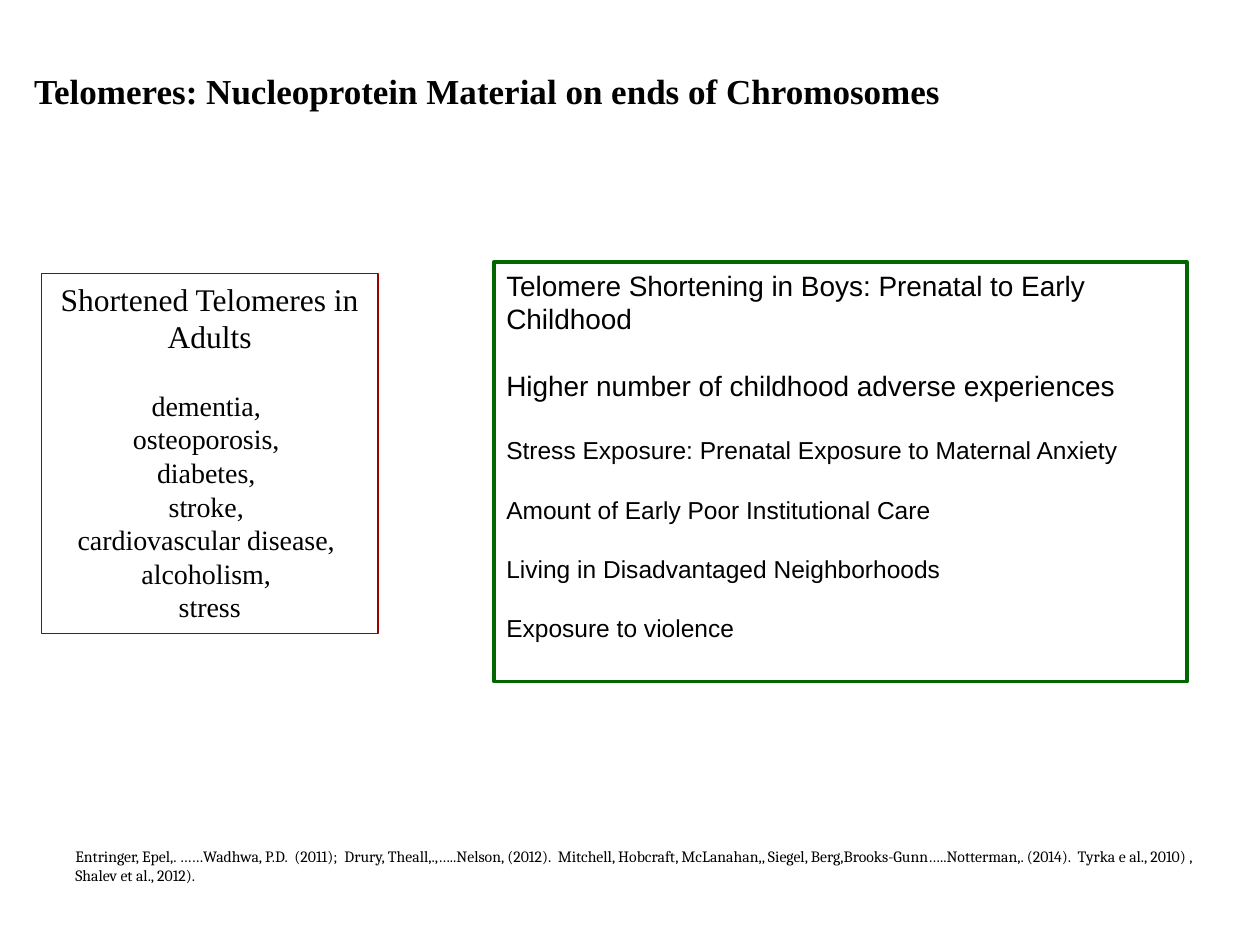
import pptx
import pptx.util
import pptx.dml.color
import pptx.enum.shapes
import pptx.enum.text

Inches = pptx.util.Inches
Pt = pptx.util.Pt
Align = pptx.enum.text.PP_ALIGN
Anchor = pptx.enum.text.MSO_ANCHOR

BLACK = pptx.dml.color.RGBColor(0x00, 0x00, 0x00)
WHITE = pptx.dml.color.RGBColor(0xFF, 0xFF, 0xFF)
GREEN = pptx.dml.color.RGBColor(0x00, 0x66, 0x00)
RED = pptx.dml.color.RGBColor(0x9E, 0x00, 0x00)

TITLE = "Telomeres: Nucleoprotein Material on ends of Chromosomes"
ADULT_HEADING = "Shortened Telomeres in Adults"
ADULT_CONDITIONS = ["dementia, ", "osteoporosis, ", "diabetes, ", "stroke, ",
                    "cardiovascular disease, ", "alcoholism, ", "stress"]
BOYS_FINDINGS = ["Telomere Shortening in Boys: Prenatal to Early Childhood",
                 "Higher number of childhood adverse experiences"]
BOYS_STRESSORS = ["Stress Exposure: Prenatal Exposure to Maternal Anxiety",
                  "Amount of Early Poor Institutional Care",
                  "Living in Disadvantaged Neighborhoods",
                  "Exposure to violence"]
CITATION = ("Entringer, Epel,. ……Wadhwa, P.D.  (2011);  Drury, Theall,.,…..Nelson, (2012).  "
            "Mitchell, Hobcraft, McLanahan,, Siegel, Berg,Brooks-Gunn…..Notterman,. (2014).  "
            "Tyrka e al., 2010) , Shalev et al., 2012).")


def set_format(target, values):
    for name, value in values.items():
        setattr(target, name, value)


def write_lines(shape, lines, font_name, align=Align.LEFT, anchor=Anchor.TOP, bold=False):
    """Fill the shape with (text, size, space before) lines, sizes in points."""
    frame = shape.text_frame
    set_format(frame, {"word_wrap": True, "vertical_anchor": anchor,
                       "auto_size": pptx.enum.text.MSO_AUTO_SIZE.NONE,
                       "margin_left": Inches(0.1), "margin_right": Inches(0.1),
                       "margin_top": Inches(0.05), "margin_bottom": Inches(0.05)})
    for index, (text, size, gap) in enumerate(lines):
        para = frame.add_paragraph() if index else frame.paragraphs[0]
        para.alignment = align
        if gap:
            para.space_before = Pt(gap)
        span = para.add_run()
        span.text = text
        set_format(span.font, {"name": font_name, "size": Pt(size), "bold": bold})
        span.font.color.rgb = BLACK


def add_panel(page, box, fill=None, line=None, line_width=0):
    panel = page.shapes.add_shape(pptx.enum.shapes.MSO_SHAPE.RECTANGLE, *box)
    panel.shadow.inherit = False
    if fill is None:
        panel.fill.background()
    else:
        panel.fill.solid()
        panel.fill.fore_color.rgb = fill
    if line is None:
        panel.line.fill.background()
    else:
        panel.line.color.rgb = line
        panel.line.width = Pt(line_width)
    return panel


def place_title(page, box):
    title = page.shapes.title
    set_format(title, dict(zip(("left", "top", "width", "height"), box)))
    write_lines(title, [(TITLE, 20, 0)], "Times New Roman", bold=True)


def add_boys_panel(page, box):
    panel = add_panel(page, box, WHITE, GREEN, 2)
    lines = [(text, 16, 19 if index else 0) for index, text in enumerate(BOYS_FINDINGS)]
    lines += [(text, 14, 17 if index else 19) for index, text in enumerate(BOYS_STRESSORS)]
    write_lines(panel, lines, "Arial")


def add_adults_panel(page, box):
    panel = add_panel(page, box, line=RED, line_width=0.75)
    lines = [(ADULT_HEADING, 18, 0)]
    lines += [(text, 16, 0 if index else 19) for index, text in enumerate(ADULT_CONDITIONS)]
    write_lines(panel, lines, "Times New Roman", Align.CENTER)


def add_citation(page, box):
    panel = add_panel(page, box, WHITE)
    write_lines(panel, [(CITATION, 9, 0)], "Cambria", anchor=Anchor.BOTTOM)


def main():
    deck = pptx.Presentation()
    set_format(deck, {"slide_width": Inches(10), "slide_height": Inches(7.5)})
    page = deck.slides.add_slide(deck.slide_layouts.get_by_name("Title Only"))
    regions = [(place_title, (0.17, 0.5, 9, 0.44)),
               (add_boys_panel, (3.92, 2.08, 5.5, 3.33)),
               (add_citation, (0.5, 6.5, 9.33, 0.57)),
               (add_adults_panel, (0.33, 2.17, 2.67, 2.86))]
    for place, box in regions:
        place(page, [Inches(length) for length in box])
    deck.save("out.pptx")


if __name__ == "__main__":
    main()
